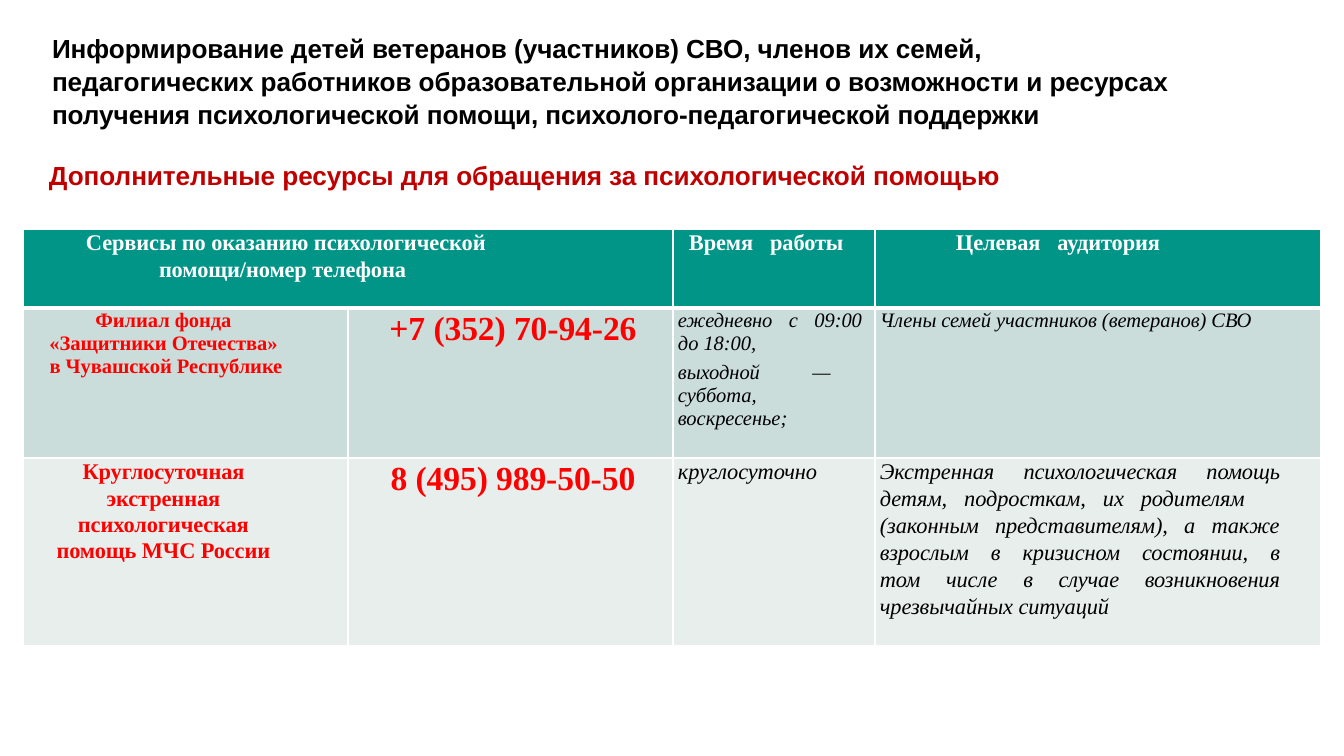
import lxml.etree
import pptx
import pptx.dml.color
import pptx.enum.text
import pptx.oxml.ns
import pptx.util

EMU_PER_PX = 914400 / 134.4
ALIGN = pptx.enum.text.PP_ALIGN
ANCHOR = pptx.enum.text.MSO_ANCHOR
WIDE_GAP = "_"

HEADING = {"size": 14, "name": "Arial", "bold": True, "color": "000000", "spc": -5}
SUBHEADING = {**HEADING, "color": "C00000"}
HEADER = {"size": 12, "name": "Times New Roman", "bold": True, "color": "FFFFFF", "spc": -5}
SERVICE = {**HEADER, "size": 11, "color": "FF0000"}
SERVICE_LARGE = {**SERVICE, "size": 12}
PHONE = {**SERVICE, "size": 18}
DETAIL = {**HEADER, "size": 11, "bold": False, "italic": True, "color": "000000"}
DETAIL_LARGE = {**DETAIL, "size": 12}

COLUMNS = [325, 325, 202, 446]
ROWS = [79, 150, 188]
FILLS = ["009587", "CADDDA", "E7EEEC"]


def px(length):
    """Turn a length in px into EMU."""
    return pptx.util.Emu(round(length * EMU_PER_PX))


def rgb(value):
    """Turn a hex string into a colour."""
    return pptx.dml.color.RGBColor.from_string(value)


def add_span(para, text, style, spc):
    """Add one formatted run with its letter spacing."""
    span = para.add_run()
    span.text = text
    values = {**style, "size": pptx.util.Pt(style["size"])}
    for name in ("size", "name", "bold", "italic"):
        setattr(span.font, name, values.get(name))
    span.font.color.rgb = rgb(style["color"])
    span.font._element.set("spc", str(spc))


def fill_para(para, text, style, align=ALIGN.LEFT, line=None, before=0,
              left=0, first=0, right=0, tab=None):
    """Write a paragraph, widening the marked gaps by letter spacing."""
    formats = {"alignment": align, "space_before": pptx.util.Pt(before), "line_spacing": line}
    for name, value in formats.items():
        setattr(para, name, value)
    properties = para._p.get_or_add_pPr()
    for name, value in {"marL": left, "indent": first, "marR": right}.items():
        properties.set(name, str(px(value)))
    if tab:
        stops = lxml.etree.SubElement(properties, pptx.oxml.ns.qn("a:tabLst"))
        lxml.etree.SubElement(stops, pptx.oxml.ns.qn("a:tab"), pos=str(px(tab)), algn="l")
    for index, part in enumerate(text.split(WIDE_GAP)):
        if index:
            add_span(para, " ", style, 600)
        add_span(para, part, style, style["spc"])


def fill_frame(frame, paragraphs):
    """Write a list of (text, style, formats) into a text frame."""
    for index, (text, style, formats) in enumerate(paragraphs):
        para = frame.add_paragraph() if index else frame.paragraphs[0]
        fill_para(para, text, style, **formats)


def add_text(page, box, paragraphs, anchor=ANCHOR.TOP):
    """Place a wrapping text box without side margins."""
    frame = page.shapes.add_textbox(*map(px, box)).text_frame
    settings = {"word_wrap": True, "vertical_anchor": anchor, "margin_left": 0,
                "margin_right": 0, "margin_top": px(1), "margin_bottom": 0}
    for name, value in settings.items():
        setattr(frame, name, value)
    fill_frame(frame, paragraphs)


def add_headings(page, box):
    """Place the slide title and the red subtitle in the box."""
    left, top, width, height = box
    add_text(page, (left + 3, top, 1120, 98), [
        ("Информирование детей ветеранов (участников) СВО, членов их семей,",
         HEADING, {"line": 1.05, "left": 2, "before": 1.1}),
        ("педагогических работников образовательной организации о возможности и ресурсах "
         "получения психологической помощи, психолого-педагогической поддержки",
         HEADING, {"line": 1.05, "left": 2}),
    ])
    add_text(page, (left, top + height - 67, width, 67), [
        ("Дополнительные ресурсы для обращения за психологической помощью",
         SUBHEADING, {"left": 2}),
    ], ANCHOR.BOTTOM)


def table_content():
    """Return the paragraphs of every cell, row by row."""
    def points(line, **formats):
        return {"line": pptx.util.Pt(line), **formats}

    phone = points(21.1, align=ALIGN.CENTER, left=5)
    service = points(12.4, align=ALIGN.CENTER, right=44)
    large = points(13.9, align=ALIGN.CENTER, right=44)
    audience = points(14.4, align=ALIGN.JUSTIFY, left=5, right=41, before=0.1)
    return [
        [
            [("Сервисы по оказанию психологической помощи/номер телефона", HEADER,
              points(14.4, left=136, first=-73, right=130, before=0.1))],
            [],
            [("Время_работы", HEADER, points(14.1, left=16))],
            [("Целевая_аудитория", HEADER, points(14.1, left=81))],
        ],
        [
            [("Филиал фонда", SERVICE, {**service, "line": pptx.util.Pt(12.9)}),
             ("«Защитники Отечества»", SERVICE, service),
             (" в Чувашской Республике", SERVICE, service)],
            [("+7 (352) 70-94-26", PHONE, phone)],
            [("ежедневно_с_09:00", DETAIL, points(12.9, left=5)),
             ("до 18:00,", DETAIL, points(12.4, left=5)),
             ("выходной\t— суббота,", DETAIL, points(12.4, left=5, before=3, tab=171)),
             ("воскресенье;", DETAIL, points(12.4, left=5))],
            [("Члены семей участников (ветеранов) СВО", DETAIL, points(12.9, left=5))],
        ],
        [
            [("Круглосуточная экстренная", SERVICE_LARGE,
              points(14.4, align=ALIGN.CENTER, left=52, right=96, before=0.1)),
             ("психологическая", SERVICE_LARGE, large),
             ("помощь МЧС России", SERVICE_LARGE, large)],
            [("8 (495) 989-50-50", PHONE, phone)],
            [("круглосуточно", DETAIL_LARGE, points(14.1, left=5))],
            [("Экстренная_психологическая_помощь детям,_подросткам,_их_родителям",
              DETAIL_LARGE, audience),
             ("(законным представителям), а также взрослым_в_кризисном_состоянии,_в "
              "том_числе_в_случае_возникновения чрезвычайных ситуаций",
              DETAIL_LARGE, audience)],
        ],
    ]


def style_cell(cell, fill, top, bottom):
    """Give a cell white borders, a fill and no margins."""
    properties = cell._tc.get_or_add_tcPr()
    for side, width in {"L": 1, "R": 1, "T": top, "B": bottom}.items():
        border = lxml.etree.SubElement(properties, pptx.oxml.ns.qn("a:ln" + side),
                                       w=str(pptx.util.Pt(width)))
        paint = lxml.etree.SubElement(border, pptx.oxml.ns.qn("a:solidFill"))
        lxml.etree.SubElement(paint, pptx.oxml.ns.qn("a:srgbClr"), val="FFFFFF")
    cell.fill.solid()
    cell.fill.fore_color.rgb = rgb(fill)
    for side in ("left", "right", "top", "bottom"):
        setattr(cell, "margin_" + side, 0)


def add_services_table(page, box):
    """Place the table of help services in the box."""
    table = page.shapes.add_table(len(ROWS), len(COLUMNS), *map(px, box)).table
    table.first_row = table.horz_banding = False
    for column, width in zip(table.columns, COLUMNS):
        column.width = px(width)
    for row, height in zip(table.rows, ROWS):
        row.height = px(height)
    table.cell(0, 0).merge(table.cell(0, 1))
    for row, cells in enumerate(table_content()):
        for column, paragraphs in enumerate(cells):
            cell = table.cell(row, column)
            style_cell(cell, FILLS[row], 3 if row == 1 else 1, 3 if row == 0 else 1)
            fill_frame(cell.text_frame, paragraphs)


def main():
    """Build the slide and save the deck."""
    deck = pptx.Presentation()
    deck.slide_width, deck.slide_height = px(1344), px(756)
    page = deck.slides.add_slide(deck.slide_layouts[6])
    add_headings(page, (47, 30, 1269, 161))
    add_services_table(page, (23, 229, sum(COLUMNS), sum(ROWS)))
    deck.save("out.pptx")


if __name__ == "__main__":
    main()
